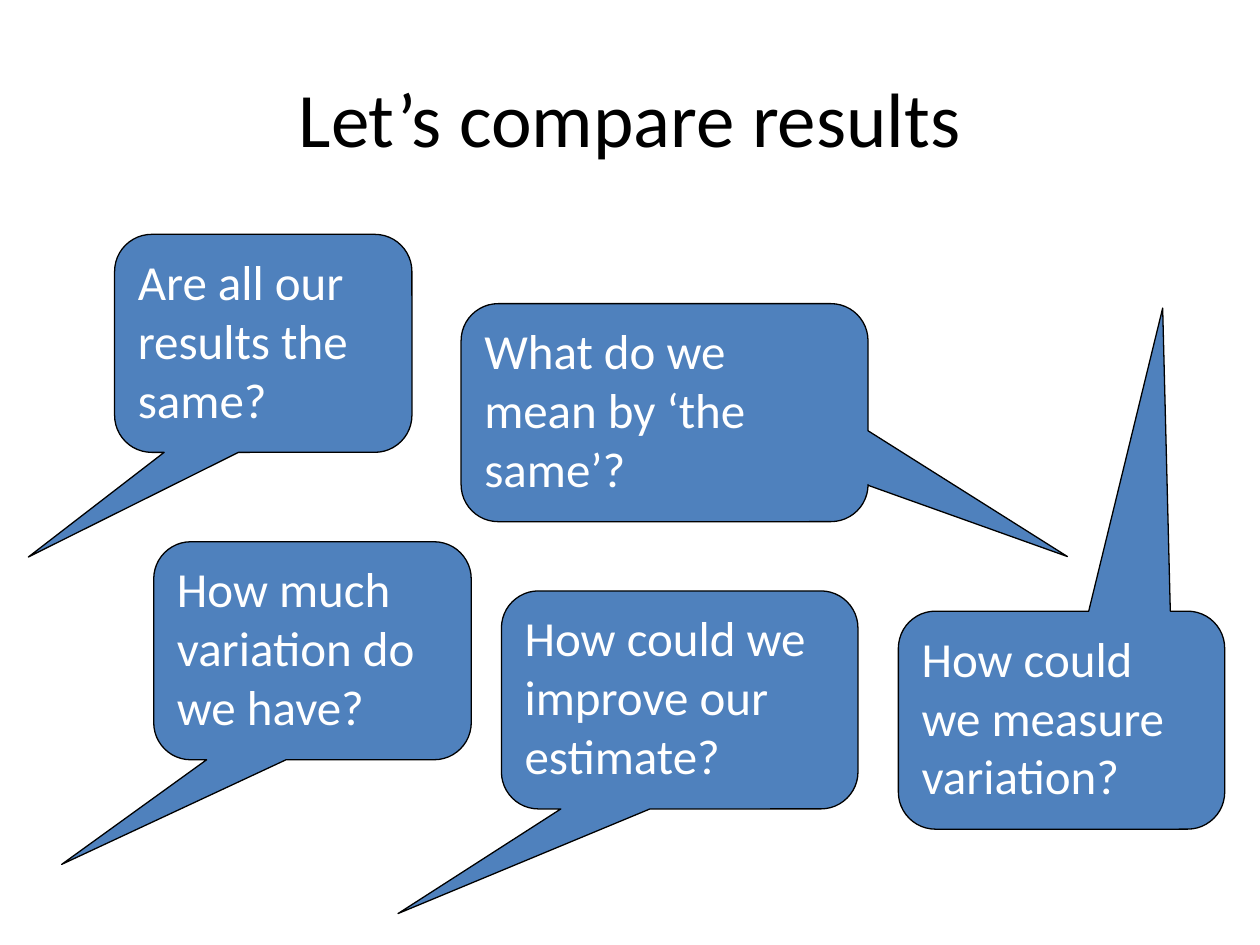
from dataclasses import dataclass

from pptx import Presentation
from pptx.dml.color import RGBColor
from pptx.enum.shapes import MSO_SHAPE
from pptx.enum.text import MSO_ANCHOR, PP_ALIGN
from pptx.util import Inches, Pt

CALLOUT = MSO_SHAPE.ROUNDED_RECTANGULAR_CALLOUT
TOP, MIDDLE = MSO_ANCHOR.TOP, MSO_ANCHOR.MIDDLE
LEFT, CENTER = PP_ALIGN.LEFT, PP_ALIGN.CENTER
TITLE_ONLY = 5


@dataclass(frozen=True)
class Theme:
    font: str = "Calibri"
    title_size: Pt = Pt(44)
    bubble_size: Pt = Pt(28)
    outline_width: Pt = Pt(0.75)
    ink: RGBColor = RGBColor(0x00, 0x00, 0x00)
    paper: RGBColor = RGBColor(0xFF, 0xFF, 0xFF)
    bubble: RGBColor = RGBColor(0x4F, 0x81, 0xBD)


@dataclass(frozen=True)
class Bubble:
    """Position and width in percent of the slide; tail tip relative to the bubble."""
    text: str
    left: float
    top: float
    width: float
    tail: tuple[float, float] = (-0.79, 0.98)


THEME = Theme()
SLIDE_WIDTH, SLIDE_HEIGHT = Inches(10), Inches(7.5)
BUBBLE_HEIGHT = 23.07
CORNER = 0.17

BUBBLES = (
    Bubble("Are all our results the same?", 9.1, 24.8, 23.6),
    Bubble("What do we mean by ‘the same’?", 36.6, 32.13, 32.3, (0.99, 0.66)),
    Bubble("How much variation do we have?", 12.2, 57.33, 25.2),
    Bubble("How could we improve our estimate?", 39.8, 62.53, 28.3),
    Bubble("How could we measure variation?", 71.3, 64.67, 25.9, (0.31, -1.89)),
)


def across(percent: float) -> int:
    return round(SLIDE_WIDTH * percent / 100)


def down(percent: float) -> int:
    return round(SLIDE_HEIGHT * percent / 100)


def set_attributes(target, values: dict) -> None:
    for name, value in values.items():
        setattr(target, name, value)


def write_text(shape, text: str, size: Pt, color: RGBColor, align, anchor) -> None:
    frame = shape.text_frame
    set_attributes(frame, {"word_wrap": True, "vertical_anchor": anchor})
    para = frame.paragraphs[0]
    para.alignment = align
    span = para.add_run()
    span.text = text
    set_attributes(span.font, {"name": THEME.font, "size": size})
    span.font.color.rgb = color


def draw_title(page, text: str) -> None:
    title = page.shapes.title
    set_attributes(title, {"left": across(5), "top": down(4),
                           "width": across(90), "height": down(16.67)})
    write_text(title, text, THEME.title_size, THEME.ink, CENTER, MIDDLE)


def draw_bubble(page, bubble: Bubble) -> None:
    box = page.shapes.add_shape(CALLOUT, across(bubble.left), down(bubble.top),
                                across(bubble.width), down(BUBBLE_HEIGHT))
    for index, value in enumerate((*bubble.tail, CORNER)):
        box.adjustments[index] = value
    box.shadow.inherit = False
    box.fill.solid()
    box.fill.fore_color.rgb = THEME.bubble
    box.line.color.rgb = THEME.ink
    box.line.width = THEME.outline_width
    write_text(box, bubble.text, THEME.bubble_size, THEME.paper, LEFT, TOP)


def main() -> None:
    deck = Presentation()
    set_attributes(deck, {"slide_width": SLIDE_WIDTH, "slide_height": SLIDE_HEIGHT})
    page = deck.slides.add_slide(deck.slide_layouts[TITLE_ONLY])
    page.background.fill.solid()
    page.background.fill.fore_color.rgb = THEME.paper

    # Heading
    draw_title(page, "Let’s compare results")

    # Discussion questions
    for bubble in BUBBLES:
        draw_bubble(page, bubble)

    deck.save("out.pptx")


if __name__ == "__main__":
    main()
